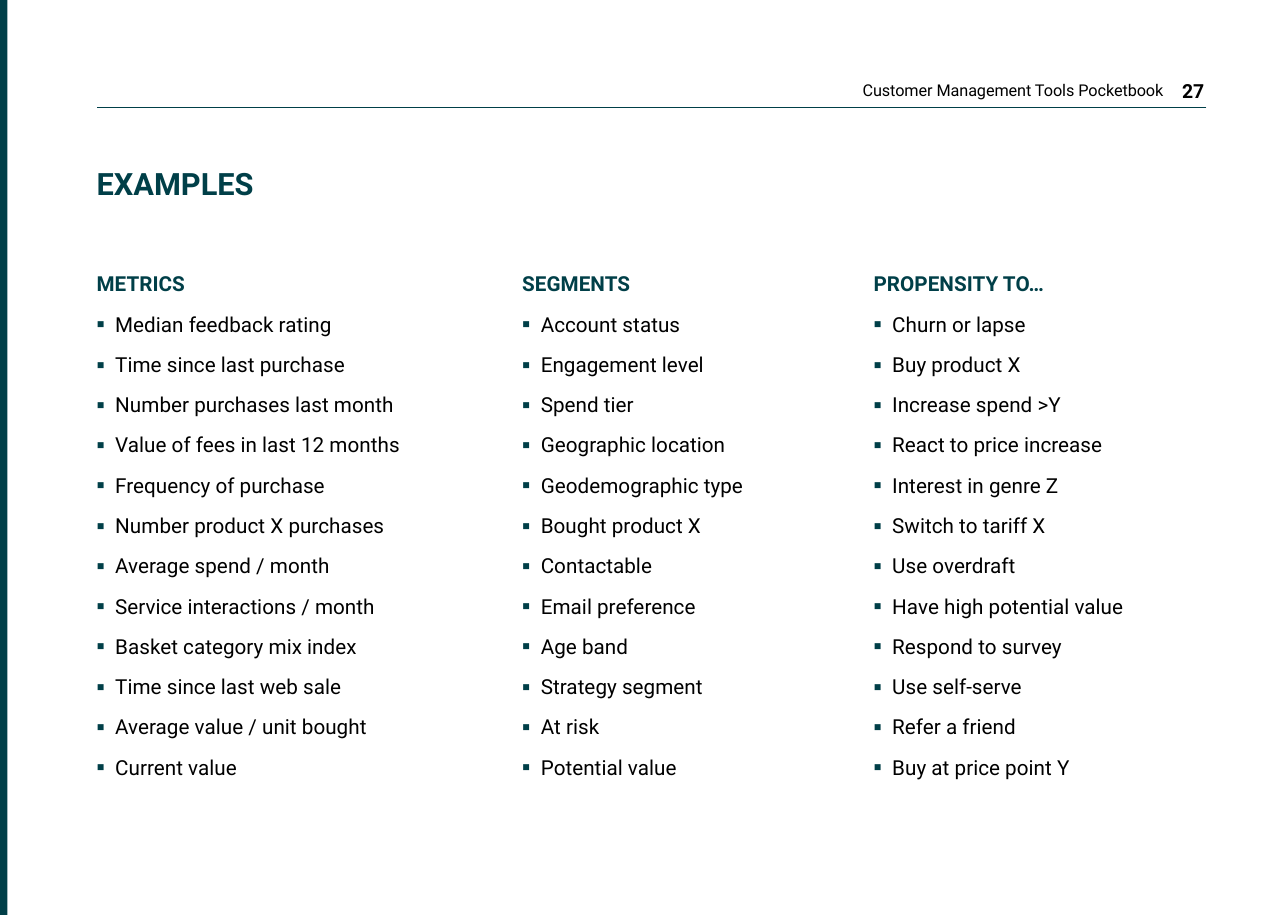
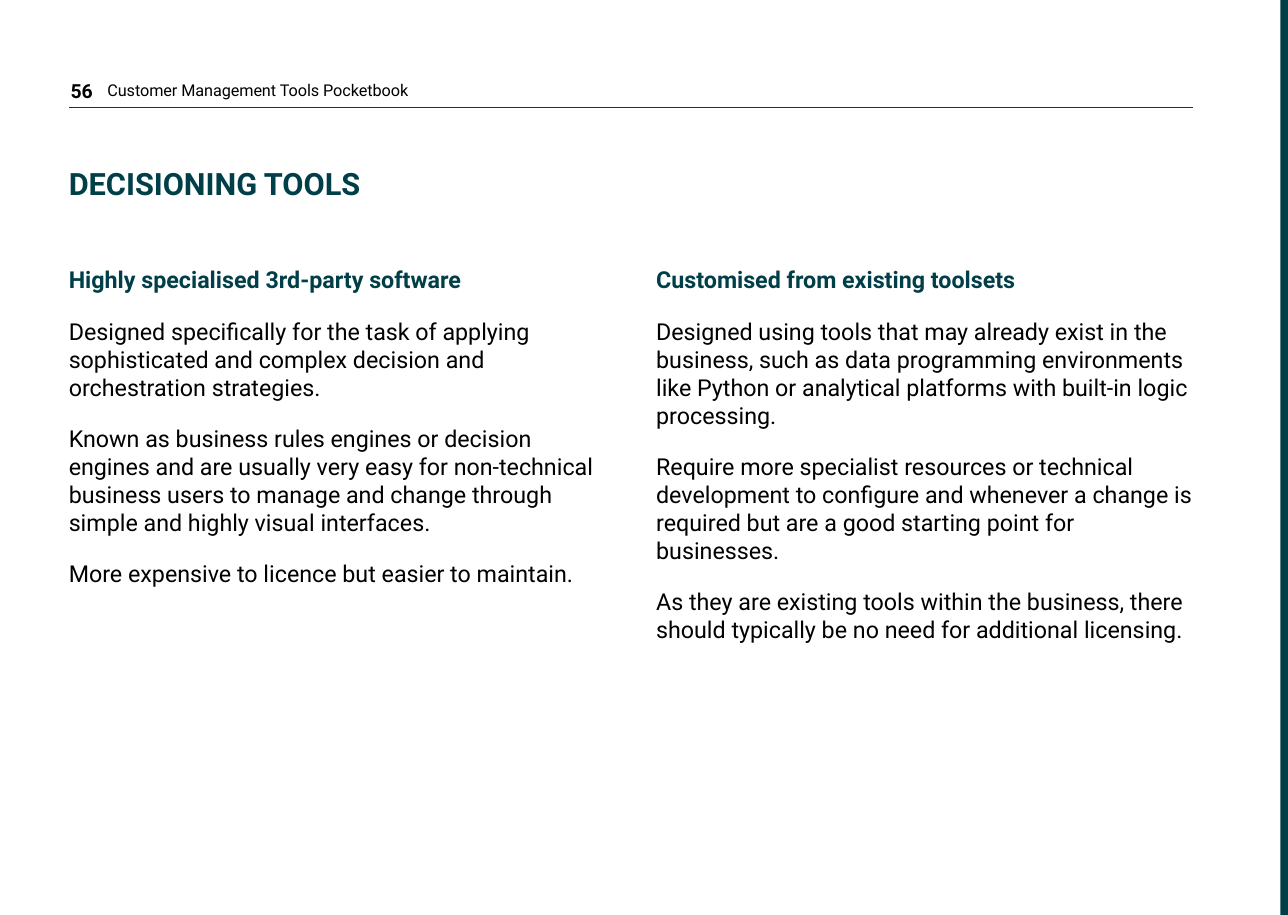
from lxml.etree import SubElement
from pptx import Presentation
from pptx.dml.color import RGBColor
from pptx.enum.shapes import MSO_CONNECTOR, MSO_SHAPE
from pptx.enum.text import MSO_ANCHOR, MSO_AUTO_SIZE, PP_ALIGN
from pptx.oxml.ns import qn
from pptx.util import Inches, Mm, Pt

WIDE, HIGH = Mm(176), Mm(125)
BAND = Inches(0.04)
FONT = "Roboto"
COLORS = {"teal": "003F48", "black": "000000"}
BOOK = "Customer Management Tools Pocketbook"

METRICS = ("METRICS", [
    "Median feedback rating", "Time since last purchase",
    "Number purchases last month", "Value of fees in last 12 months",
    "Frequency of purchase", "Number product X purchases",
    "Average spend / month", "Service interactions / month",
    "Basket category mix index", "Time since last web sale",
    "Average value / unit bought", "Current value"])
SEGMENTS = ("SEGMENTS", [
    "Account status", "Engagement level", "Spend tier",
    "Geographic location", "Geodemographic type", "Bought product X",
    "Contactable", "Email preference", "Age band", "Strategy segment",
    "At risk", "Potential value"])
PROPENSITY = ("PROPENSITY TO…", [
    "Churn or lapse", "Buy product X", "Increase spend >Y",
    "React to price increase", "Interest in genre Z", "Switch to tariff X",
    "Use overdraft", "Have high potential value", "Respond to survey",
    "Use self-serve", "Refer a friend", "Buy at price point Y"])
SPECIAL = ("Highly specialised 3rd-party software", [
    "Designed specifically for the task of applying sophisticated and "
    "complex decision and orchestration strategies.",
    "Known as business rules engines or decision engines and are usually "
    "very easy for non-technical business users to manage and change "
    "through simple and highly visual interfaces.",
    "More expensive to licence but easier to maintain."])
CUSTOM = ("Customised from existing toolsets", [
    "Designed using tools that may already exist in the business, such as "
    "data programming environments like Python or analytical platforms "
    "with built-in logic processing.",
    "Require more specialist resources or technical development to "
    "configure and whenever a change is required but are a good starting "
    "point for businesses.",
    "As they are existing tools within the business, there should "
    "typically be no need for additional licensing."])


def color(name):
    return RGBColor.from_string(COLORS[name])


def style(para, size, name="black", bold=False, align=PP_ALIGN.LEFT):
    para.alignment = align
    font = para.font
    font.name, font.size, font.bold = FONT, Pt(size), bold
    font.color.rgb = color(name)


def place(shape, box):
    shape.left, shape.top, shape.width, shape.height = map(Inches, box)


def setup(frame, insets, anchor):
    frame.word_wrap = True
    frame.auto_size = MSO_AUTO_SIZE.NONE
    frame.vertical_anchor = anchor
    (frame.margin_left, frame.margin_top,
     frame.margin_right, frame.margin_bottom) = map(Inches, insets)


def write(slide, box, insets, anchor=MSO_ANCHOR.MIDDLE):
    frame = slide.shapes.add_textbox(*map(Inches, box)).text_frame
    setup(frame, insets, anchor)
    return frame


def bullet(para):
    props = para._p.get_or_add_pPr()
    props.set("marL", str(Inches(0.1)))
    props.set("indent", str(Inches(-0.1)))
    tint = SubElement(props, qn("a:buClr"))
    SubElement(tint, qn("a:srgbClr"), val=COLORS["teal"])
    SubElement(props, qn("a:buFont"), typeface=FONT)
    SubElement(props, qn("a:buChar"), char="▪")


def header(slide, number, left, right, odd):
    align = PP_ALIGN.RIGHT if odd else PP_ALIGN.LEFT
    start = right - 2.86 if odd else left + 0.11
    name = write(slide, (start, 0.38, 2.73, 0.21), (0.1, 0.05, 0.1, 0.05))
    name.text = BOOK
    style(name.paragraphs[0], 6.3, align=align)

    start = right - 0.28 if odd else left - 0.05
    page = write(slide, (start, 0.37, 0.33, 0.24), (0.06, 0.03, 0.06, 0.03))
    page.text = str(number)
    style(page.paragraphs[0], 7.5, bold=True, align=align)

    rule = slide.shapes.add_connector(
        MSO_CONNECTOR.STRAIGHT, Inches(right), Inches(0.58),
        Inches(left), Inches(0.58))
    rule.line.color.rgb = color("teal")
    rule.line.width = Pt(0.5)
    SubElement(rule._element.spPr, qn("a:effectLst"))


def band(slide, left):
    bar = slide.shapes.add_shape(MSO_SHAPE.RECTANGLE, left, 0, BAND, HIGH)
    bar.shadow.inherit = False
    bar.fill.solid()
    bar.fill.fore_color.rgb = color("teal")
    bar.line.fill.background()


def heading(slide, text, left):
    title = slide.shapes.title
    place(title, (left, 0.85, 5.55, 0.3))
    frame = title.text_frame
    setup(frame, (0, 0.03, 0.06, 0.03), MSO_ANCHOR.MIDDLE)
    frame.text = text
    para = frame.paragraphs[0]
    para.line_spacing = 0.9
    style(para, 11.9, "teal", True)


def column(slide, box, content, size, gap, marked=False):
    frame = write(slide, box, (0, 0.05, 0, 0.05), MSO_ANCHOR.TOP)
    head, items = content
    para = frame.paragraphs[0]
    para.text = head
    para.space_after = Pt(gap)
    style(para, size, "teal", True)
    for item in items:
        para = frame.add_paragraph()
        para.text = item
        if marked:
            bullet(para)
        para.space_after = Pt(gap)
        style(para, size)


def page(deck, number, title, left, right):
    slide = deck.slides.add_slide(deck.slide_layouts[5])
    odd = number % 2 == 1
    header(slide, number, left, right, odd)
    band(slide, 0 if odd else WIDE - BAND)
    heading(slide, title, left)
    return slide


def examples(deck):
    left, right = 0.52, 6.49
    slide = page(deck, 27, "EXAMPLES", left, right)
    parts = ((0, 1.93, METRICS), (2.29, 1.74, SEGMENTS),
             (4.18, 1.79, PROPENSITY))
    for shift, width, content in parts:
        column(slide, (left + shift, 1.41, width, 2.95), content, 8, 6, True)


def tools(deck):
    left, right, width = 0.37, 6.42, 2.89
    slide = page(deck, 56, "DECISIONING TOOLS", left, right)
    for start, content in ((left, SPECIAL), (right - width, CUSTOM)):
        column(slide, (start, 1.38, width, 2.25), content, 9, 9)


def main():
    deck = Presentation()
    deck.slide_width, deck.slide_height = WIDE, HIGH
    examples(deck)
    tools(deck)
    deck.save("out.pptx")


if __name__ == "__main__":
    main()
